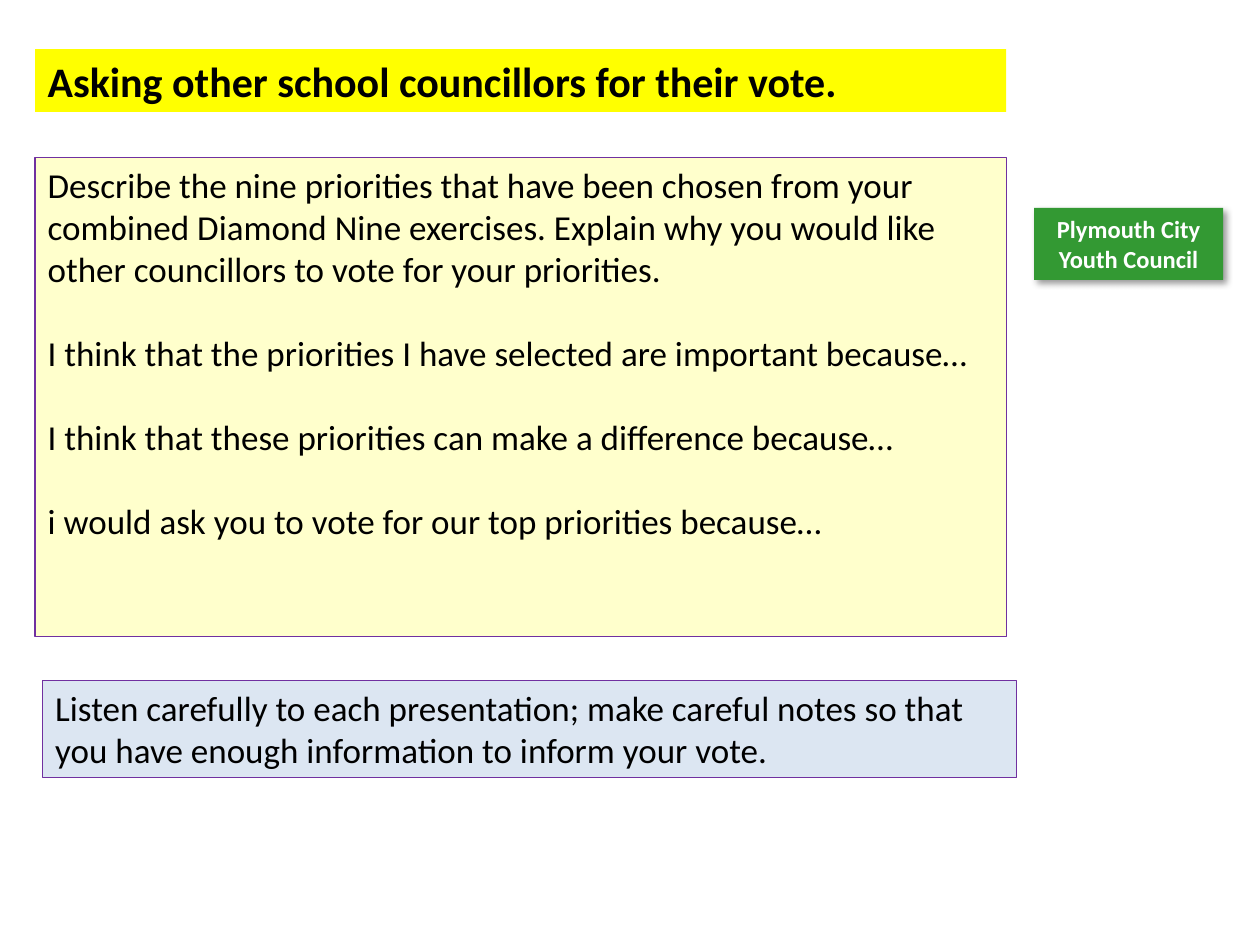
from dataclasses import dataclass

from lxml.etree import SubElement
from pptx import Presentation
from pptx.dml.color import RGBColor as Rgb
from pptx.enum.shapes import MSO_SHAPE as Preset
from pptx.enum.text import MSO_ANCHOR as Anchor, MSO_AUTO_SIZE as AutoSize, PP_ALIGN as Align
from pptx.oxml.ns import qn
from pptx.util import Pt


@dataclass(frozen=True)
class Theme:
    font: str = "Calibri"
    ink: str = "000000"
    white: str = "FFFFFF"
    yellow: str = "FFFF00"
    cream: str = "FFFFCC"
    pale_blue: str = "DCE6F2"
    green: str = "339933"
    purple: str = "7030A0"
    heading_size: float = 24
    text_size: float = 20
    badge_size: float = 14
    border: float = 0.75


class VoteSlide:
    """Holds the theme and the current slide, and adds each kind of panel."""

    def __init__(self, deck, theme):
        self.theme = theme
        self.slide = deck.slides.add_slide(deck.slide_layouts[1])

    def _panel(self, panel, box, fill, border=None):
        panel.left, panel.top, panel.width, panel.height = map(Pt, box)
        panel.fill.solid()
        panel.fill.fore_color.rgb = Rgb.from_string(fill)
        if border:
            panel.line.color.rgb = Rgb.from_string(border)
            panel.line.width = Pt(self.theme.border)
        else:
            panel.line.fill.background()

    def _write(self, panel, text, size, color=None, bold=False, align=Align.LEFT, gap=0):
        frame = panel.text_frame
        frame.text = text
        frame.word_wrap = True
        frame.auto_size = AutoSize.NONE
        frame.vertical_anchor = Anchor.TOP
        for paragraph in frame.paragraphs:
            paragraph.alignment = align
            paragraph.space_before = Pt(0)
            paragraph.space_after = Pt(gap)
            for run in paragraph.runs:
                run.font.name = self.theme.font
                run.font.size = Pt(size)
                run.font.bold = bold
                run.font.color.rgb = Rgb.from_string(color or self.theme.ink)

    def heading(self, text, box):
        title = self.slide.shapes.title
        self._panel(title, box, self.theme.yellow)
        self._write(title, text, self.theme.heading_size, bold=True)

    def prompts(self, lines, box, gap):
        body = self.slide.placeholders[1]
        self._panel(body, box, self.theme.cream, self.theme.purple)
        self._write(body, "\n".join(lines), self.theme.text_size, gap=gap)
        for paragraph in body.text_frame.paragraphs:
            properties = paragraph._p.get_or_add_pPr()
            properties.set("marL", "0")
            properties.set("indent", "0")
            SubElement(properties, qn("a:buNone"))

    def note(self, text, box):
        note = self.slide.shapes.add_shape(Preset.RECTANGLE, *map(Pt, box))
        note.shadow.inherit = False
        self._panel(note, box, self.theme.pale_blue, self.theme.purple)
        self._write(note, text, self.theme.text_size)

    def badge(self, text, box):
        badge = self.slide.shapes.add_shape(Preset.RECTANGLE, *map(Pt, box))
        badge.shadow.inherit = False
        self._panel(badge, box, self.theme.green)
        self._write(badge, text, self.theme.badge_size, self.theme.white, True, Align.CENTER)
        effects = badge._element.spPr.find(qn("a:effectLst"))
        shadow = SubElement(effects, qn("a:outerShdw"), blurRad=str(Pt(4)),
                            dist=str(Pt(3)), dir="2700000", algn="tl", rotWithShape="0")
        tint = SubElement(shadow, qn("a:srgbClr"), val=self.theme.ink)
        SubElement(tint, qn("a:alpha"), val="40000")


def main():
    deck = Presentation()
    deck.slide_width, deck.slide_height = Pt(720), Pt(540)
    vote = VoteSlide(deck, Theme())
    left, width = 20, 555
    vote.badge("Plymouth City Youth Council", (591, 118.8, 108, 41.2))
    vote.heading("Asking other school councillors for their vote.", (left, 28, width, 36))
    vote.prompts([
        "Describe the nine priorities that have been chosen from your combined Diamond Nine "
        "exercises. Explain why you would like other councillors to vote for your priorities.",
        "I think that the priorities I have selected are important because…",
        "I think that these priorities can make a difference because…",
        "i would ask you to vote for our top priorities because…",
    ], (left, 90, width, 273.6), gap=24)
    vote.note("Listen carefully to each presentation; make careful notes so that you have "
              "enough information to inform your vote.", (24.5, 389, 556.5, 55.5))
    deck.save("out.pptx")


if __name__ == "__main__":
    main()
